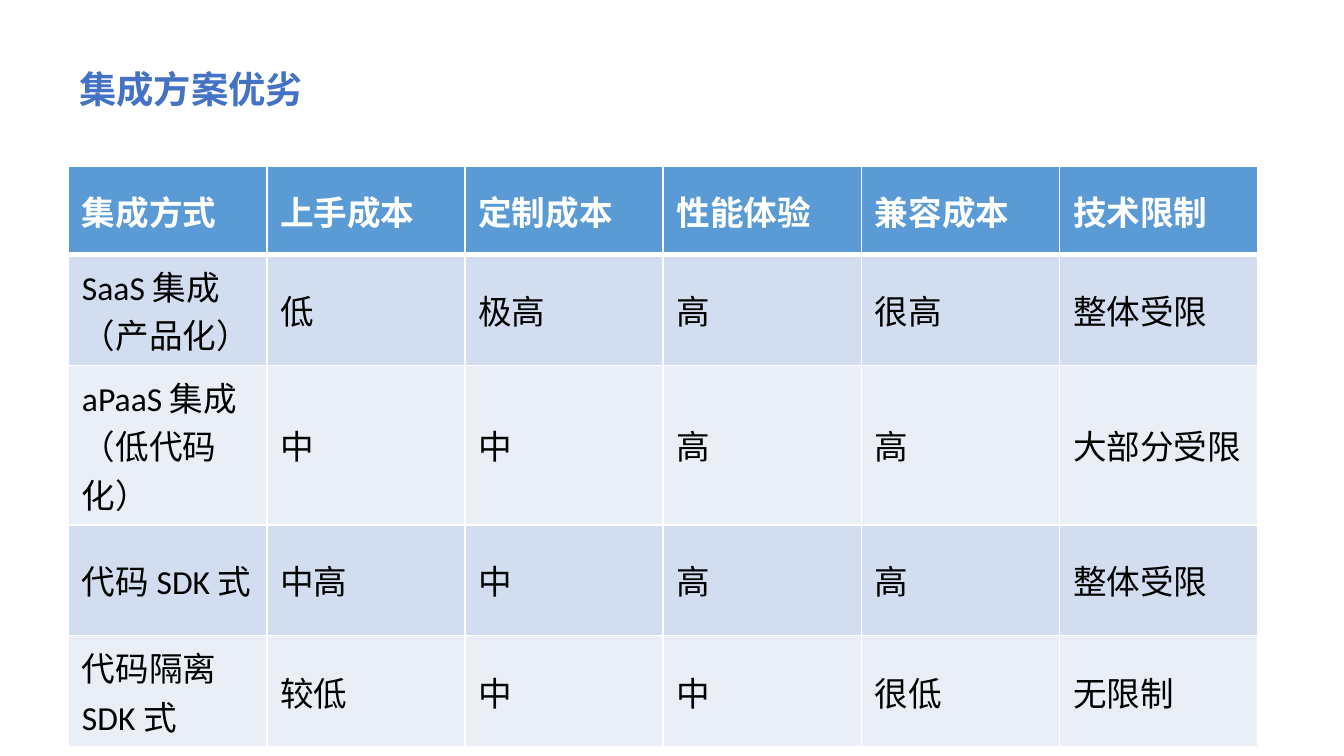
from lxml import etree
from pptx import Presentation
from pptx import util as u
from pptx.dml.color import RGBColor
from pptx.enum import text
from pptx.oxml import ns

WHITE = "FFFFFF"
HEADER_FILL = "5B9BD5"
BAND_FILLS = ["D2DEEF", "EAEFF7"]
ROW_HEIGHTS = [0.65, 0.83, 0.84, 0.65, 0.83]
ROWS = [
    ["集成方式", "上手成本", "定制成本", "性能体验", "兼容成本", "技术限制"],
    ["SaaS 集成（产品化）", "低", "极高", "高", "很高", "整体受限"],
    ["aPaaS 集成（低代码化）", "中", "中", "高", "高", "大部分受限"],
    ["代码 SDK 式", "中高", "中", "高", "高", "整体受限"],
    ["代码隔离 SDK 式", "较低", "中", "中", "很低", "无限制"],
]


def color(hex_value):
    return RGBColor.from_string(hex_value)


def write_text(frame, content, hex_color, **formats):
    frame.word_wrap = True
    run = frame.paragraphs[0].add_run()
    run.text = content
    for name, value in {"name": "Calibri", **formats}.items():
        setattr(run.font, name, value)
    run.font.color.rgb = color(hex_color)


def add_borders(cell, widths):
    properties = cell._tc.get_or_add_tcPr()
    for side, points in widths.items():
        line = etree.SubElement(properties, ns.qn(f"a:ln{side}"), w=str(u.Pt(points)))
        fill = etree.SubElement(line, ns.qn("a:solidFill"))
        etree.SubElement(fill, ns.qn("a:srgbClr"), val=WHITE)


def add_title(slide, content):
    box = slide.shapes.add_textbox(
        u.Inches(0.49), u.Inches(0.44), u.Inches(4.04), u.Inches(0.44))
    write_text(box.text_frame, content, "4472C4", size=u.Pt(20), bold=True)
    box.text_frame.auto_size = text.MSO_AUTO_SIZE.SHAPE_TO_FIT_TEXT


def add_comparison_table(slide):
    table = slide.shapes.add_table(
        len(ROWS), len(ROWS[0]), u.Inches(0.51), u.Inches(1.24),
        u.Inches(8.85), u.Inches(sum(ROW_HEIGHTS))).table
    for row_index, (labels, height) in enumerate(zip(ROWS, ROW_HEIGHTS)):
        table.rows[row_index].height = u.Inches(height)
        header = row_index == 0
        # A thick rule separates the header from the body
        borders = {"L": 1, "R": 1, "T": 3 if row_index == 1 else 1, "B": 3 if header else 1}
        fill = HEADER_FILL if header else BAND_FILLS[(row_index - 1) % 2]
        for column_index, label in enumerate(labels):
            cell = table.cell(row_index, column_index)
            add_borders(cell, borders)
            cell.fill.solid()
            cell.fill.fore_color.rgb = color(fill)
            cell.vertical_anchor = text.MSO_ANCHOR.MIDDLE
            write_text(cell.text_frame, label, WHITE if header else "000000",
                       size=u.Pt(18), bold=header)


def main():
    presentation = Presentation()
    # Widescreen, 16:9
    presentation.slide_width = u.Inches(10)
    presentation.slide_height = u.Inches(10 * 9 / 16)
    slide = presentation.slides.add_slide(presentation.slide_layouts[6])

    # Comparison of integration options, with its heading
    add_comparison_table(slide)
    add_title(slide, "集成方案优劣")

    presentation.save("out.pptx")


if __name__ == "__main__":
    main()
